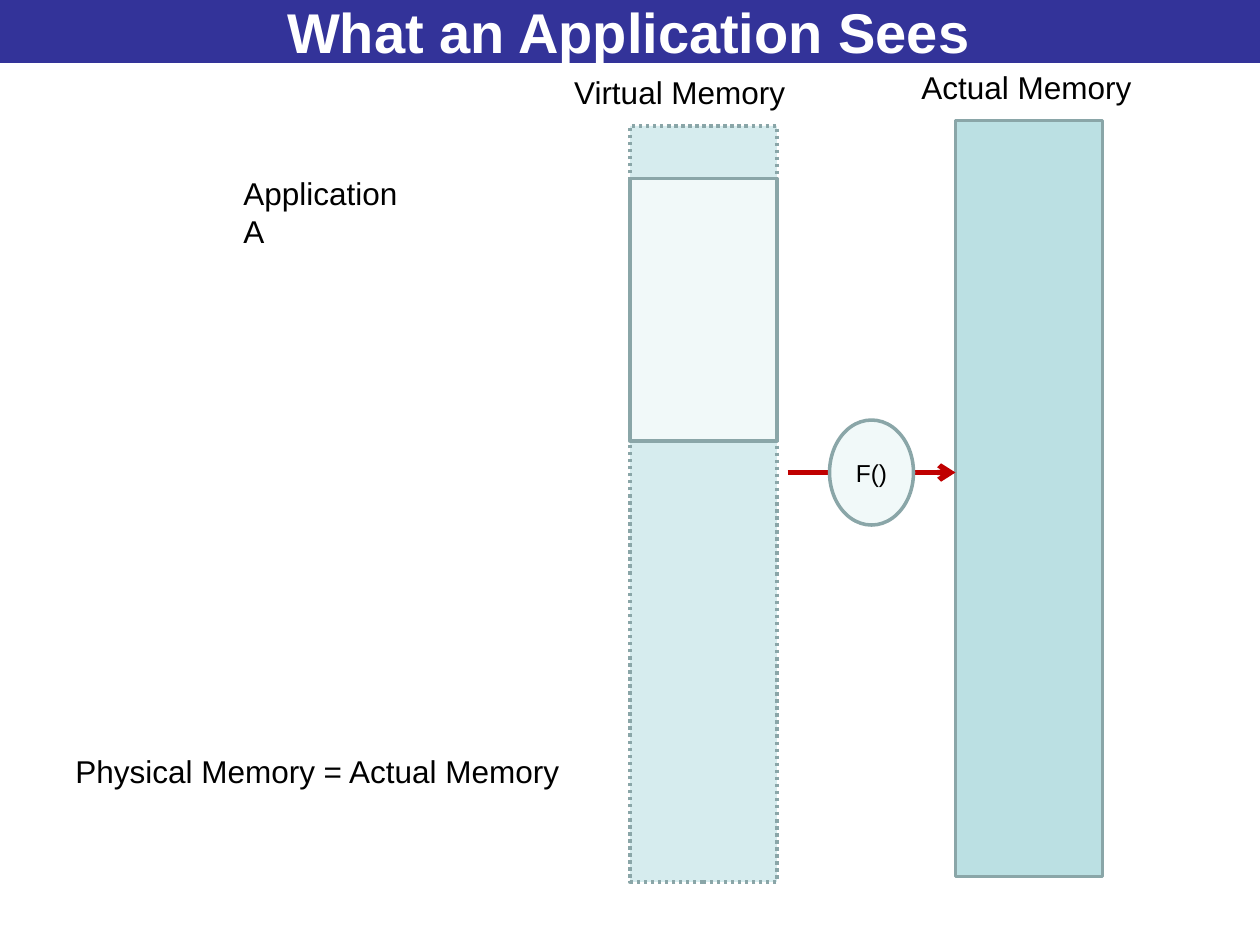
from typing import NamedTuple, Optional

import pptx
import pptx.dml.color
import pptx.enum.dml
import pptx.enum.shapes
import pptx.enum.text
import pptx.oxml
import pptx.oxml.ns
import pptx.util

Pt = pptx.util.Pt
KIND = pptx.enum.shapes.MSO_SHAPE
ALIGN = pptx.enum.text.PP_ALIGN
ANCHOR = pptx.enum.text.MSO_ANCHOR
DOTS = pptx.enum.dml.MSO_LINE.ROUND_DOT

FONT = "Arial"
COLORS = {
    "banner": "333399",
    "virtual": "D6ECEE",
    "actual": "BBE0E3",
    "pale": "F1F9F9",
    "edge": "8AA6A8",
    "arrow": "C00000",
    "black": "000000",
    "white": "FFFFFF",
}
BAR_WIDTH, BAR_HEIGHT = 84, 432
VIRTUAL_LEFT, ACTUAL_LEFT = 360, 546
ARROW_TOP = 270


class Block(NamedTuple):
    left: float
    top: float
    width: float
    height: float
    fill: str
    edge: Optional[str] = "edge"
    kind: int = KIND.RECTANGLE
    dotted: bool = False
    text: str = ""
    size: float = 14
    color: str = "black"
    bold: bool = False


class Label(NamedTuple):
    text: str
    left: float
    top: float
    width: float
    wrap: bool = False


BANNER = Block(-1.5, 0, 721.5, 36, "banner", None,
               text="What an Application Sees", size=32, color="white", bold=True)
BARS = [
    Block(VIRTUAL_LEFT, 72, BAR_WIDTH, BAR_HEIGHT, "virtual", dotted=True),
    Block(VIRTUAL_LEFT, 102, BAR_WIDTH, 150, "pale"),
    Block(ACTUAL_LEFT, 69, BAR_WIDTH, BAR_HEIGHT, "actual"),
]
MAPPING = Block(474, ARROW_TOP - 30, 48, 60, "pale", kind=KIND.OVAL, text="F()")
LABELS = [
    Label("Application A", 132, 96, 112, wrap=True),
    Label("Virtual Memory", 321, 38.3, 136),
    Label("Actual Memory", 519.5, 35.4, 135.5),
    Label("Physical Memory = Actual Memory", 36, 426, 294),
]


def color_of(name: str) -> pptx.dml.color.RGBColor:
    return pptx.dml.color.RGBColor.from_string(COLORS[name])


def write(frame, text: str, size: float, color: str = "black", bold: bool = False) -> None:
    frame.text = text
    for part in frame.paragraphs:
        for run in part.runs:
            run.font.name = FONT
            run.font.size = Pt(size)
            run.font.bold = bold
            run.font.color.rgb = color_of(color)


def draw_block(slide, block: Block) -> None:
    shape = slide.shapes.add_shape(block.kind, Pt(block.left), Pt(block.top),
                                   Pt(block.width), Pt(block.height))
    shape.shadow.inherit = False
    shape.fill.solid()
    shape.fill.fore_color.rgb = color_of(block.fill)
    if block.edge:
        shape.line.color.rgb = color_of(block.edge)
        shape.line.width = Pt(2)
        if block.dotted:
            shape.line.dash_style = DOTS
    else:
        shape.line.fill.background()
    if block.text:
        frame = shape.text_frame
        write(frame, block.text, block.size, block.color, block.bold)
        frame.vertical_anchor = ANCHOR.MIDDLE
        frame.paragraphs[0].alignment = ALIGN.CENTER


def draw_label(slide, label: Label) -> None:
    box = slide.shapes.add_textbox(Pt(label.left), Pt(label.top), Pt(label.width), Pt(29))
    box.text_frame.word_wrap = label.wrap
    write(box.text_frame, label.text, 18)


def draw_arrow(slide, start: float, end: float, top: float) -> None:
    line = slide.shapes.add_connector(pptx.enum.shapes.MSO_CONNECTOR.STRAIGHT,
                                      Pt(start), Pt(top), Pt(end), Pt(top))
    line.line.color.rgb = color_of("arrow")
    line.line.width = Pt(3)
    head = pptx.oxml.ns.qn("a:tailEnd")
    edge = line.line._get_or_add_ln()
    edge.append(edge.makeelement(head, {"type": "arrow"}))
    props = line._element.spPr
    props.append(props.makeelement(pptx.oxml.ns.qn("a:effectLst"), {}))


def main() -> None:
    deck = pptx.Presentation()
    deck.slide_width, deck.slide_height = Pt(720), Pt(540)
    slide = deck.slides.add_slide(deck.slide_layouts[6])
    for block in [BANNER, *BARS]:
        draw_block(slide, block)
    draw_arrow(slide, 450, ACTUAL_LEFT, ARROW_TOP)
    draw_block(slide, MAPPING)
    for label in LABELS:
        draw_label(slide, label)
    deck.save("out.pptx")


if __name__ == "__main__":
    main()
